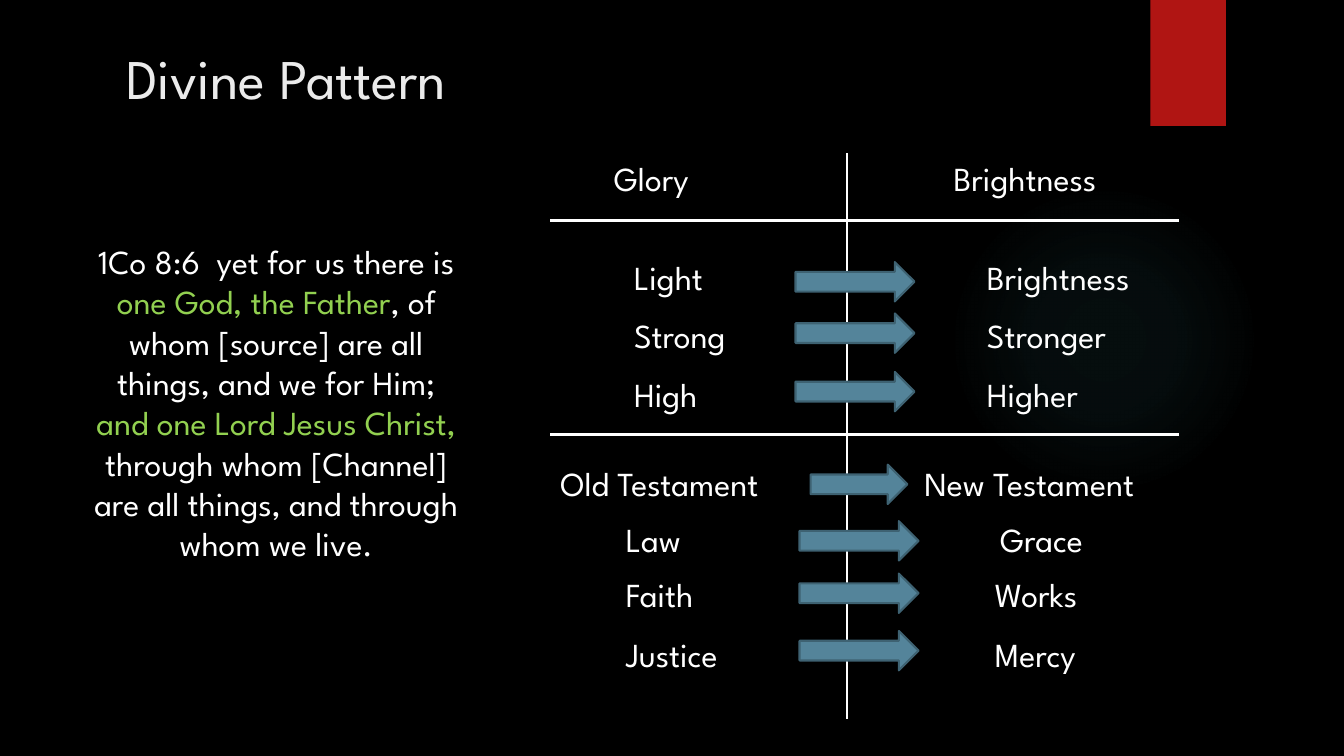
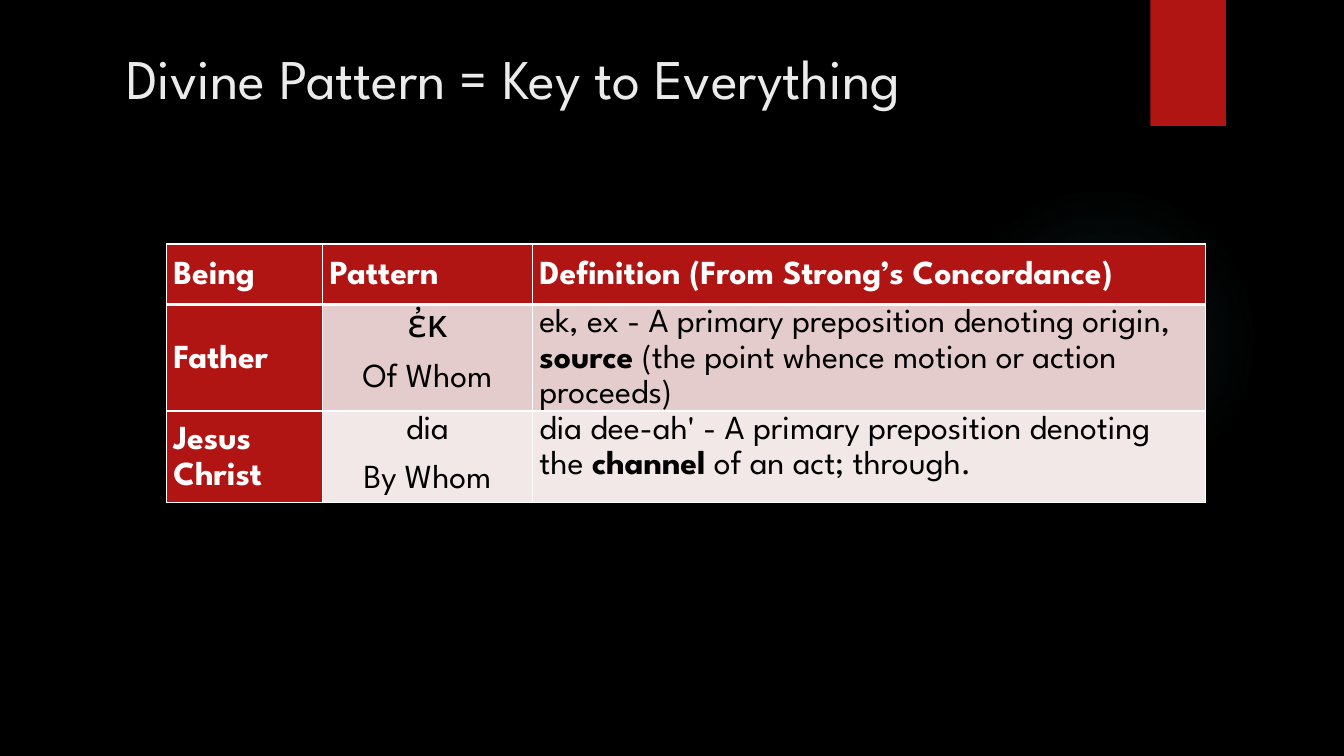
"""Build two slides on the divine pattern."""
from dataclasses import dataclass

from lxml import etree
from pptx import Presentation
from pptx.dml.color import RGBColor as Rgb
from pptx.enum.shapes import MSO_CONNECTOR as Link, MSO_SHAPE as Form
from pptx.enum.text import MSO_ANCHOR as Anchor, MSO_AUTO_SIZE as Fit, PP_ALIGN as Align
from pptx.oxml import parse_xml
from pptx.oxml.ns import qn
from pptx.util import Inches, Pt


@dataclass(frozen=True)
class Theme:
    font: str = "League Spartan"
    back: str = "000000"
    title: str = "EBEBEB"
    light: str = "FFFFFF"
    dark: str = "000000"
    red: str = "B01513"
    green: str = "92D050"
    blue: str = "54849A"
    edge: str = "3E6272"
    glow: str = "50B9C1"
    bands: tuple = ("E4CCCC", "F2E8E7")
    head: int = 40
    large: int = 28
    body: int = 24


THEME = Theme()
SPACE = "http://schemas.openxmlformats.org/drawingml/2006/main"


def write(frame, paras, align=Align.LEFT, line=None, before=0, after=0, **base):
    for index, runs in enumerate(paras):
        para = frame.paragraphs[0] if index == 0 else frame.add_paragraph()
        para.alignment = align
        if line:
            para.line_spacing = line
        para.space_before, para.space_after = Pt(before), Pt(after)
        for text, change in [(runs, {})] if isinstance(runs, str) else runs:
            look = {"size": THEME.body, "color": THEME.light, "bold": False, **base, **change}
            run = para.add_run()
            run.text = text
            run.font.name, run.font.size = THEME.font, Pt(look["size"])
            run.font.bold = look["bold"]
            run.font.color.rgb = Rgb.from_string(look["color"])


class Deck:
    def __init__(self, theme):
        self.theme = theme
        self.show = Presentation()
        self.show.slide_width, self.show.slide_height = Inches(13.33), Inches(7.5)
        self.paint(self.show.slide_master.background.fill, theme.back)

    def paint(self, fill, color):
        fill.solid()
        fill.fore_color.rgb = Rgb.from_string(color)

    def page(self, title):
        self.slide = self.show.slides.add_slide(self.show.slide_layouts[5])
        self.glow(9.41, 1.83, 3.08)
        self.shape(Form.RECTANGLE, 11.41, 0, 0.75, 1.25, self.theme.red)
        head = self.slide.shapes.title
        head.left, head.top = Inches(1.15), Inches(0.38)
        head.width, head.height = Inches(10.98), Inches(1.15)
        frame = head.text_frame
        frame.auto_size, frame.vertical_anchor = Fit.NONE, Anchor.TOP
        write(frame, [title], size=self.theme.head, color=self.theme.title)

    def shape(self, form, left, top, width, height, color, edge=None):
        item = self.slide.shapes.add_shape(
            form, Inches(left), Inches(top), Inches(width), Inches(height))
        item.shadow.inherit = False
        self.paint(item.fill, color)
        if edge:
            item.line.color.rgb = Rgb.from_string(edge)
            item.line.width = Pt(1.5)
        else:
            item.line.fill.background()
        return item

    def glow(self, left, top, size):
        item = self.shape(Form.OVAL, left, top, size, size, self.theme.glow)
        stops = "".join(
            f'<a:gs pos="{place * 1000}"><a:srgbClr val="{self.theme.glow}">'
            f'<a:alpha val="{alpha * 1000}"/></a:srgbClr></a:gs>'
            for place, alpha in ((0, 7), (36, 6), (69, 0), (100, 0)))
        grad = parse_xml(
            f'<a:gradFill xmlns:a="{SPACE}"><a:gsLst>{stops}</a:gsLst><a:path path="circle">'
            '<a:fillToRect l="50000" t="50000" r="50000" b="50000"/></a:path></a:gradFill>')
        props = item._element.spPr
        props.replace(props.find(qn("a:solidFill")), grad)

    def arrow(self, left, top, width):
        self.shape(Form.RIGHT_ARROW, left, top, width, 0.39, self.theme.blue, self.theme.edge)

    def rule(self, left, top, right, low):
        item = self.slide.shapes.add_connector(
            Link.STRAIGHT, Inches(left), Inches(top), Inches(right), Inches(low))
        item.line.color.rgb = Rgb.from_string(self.theme.light)
        item.line.width = Pt(2)
        etree.SubElement(item._element.spPr, qn("a:effectLst"))

    def text(self, paras, left, top, width, height=0.5, wrap=False, **look):
        box = self.slide.shapes.add_textbox(
            Inches(left), Inches(top), Inches(width), Inches(height))
        box.text_frame.word_wrap = wrap
        box.text_frame.auto_size = Fit.SHAPE_TO_FIT_TEXT
        write(box.text_frame, paras, **look)

    def border(self, cell, **widths):
        for side in "LRTB":
            line = etree.SubElement(
                cell._tc.get_or_add_tcPr(), qn(f"a:ln{side}"), w=str(Pt(widths.get(side, 1))))
            fill = etree.SubElement(line, qn("a:solidFill"))
            etree.SubElement(fill, qn("a:srgbClr"), val=self.theme.light)

    def table(self, rows, left, top, widths, heights):
        grid = self.slide.shapes.add_table(
            len(rows), len(widths), Inches(left), Inches(top),
            Inches(sum(widths)), Inches(sum(heights))).table
        grid.horz_banding = False
        for col, width in zip(grid.columns, widths):
            col.width = Inches(width)
        for row, height in zip(grid.rows, heights):
            row.height = Inches(height)
        for down, row in enumerate(rows):
            for over, (paras, look) in enumerate(row):
                cell = grid.cell(down, over)
                label = down == 0 or over == 0
                cell.margin_left = cell.margin_right = Inches(0.07)
                cell.margin_top = cell.margin_bottom = 0
                cell.vertical_anchor = Anchor.MIDDLE if label else Anchor.TOP
                self.border(cell, T=3 if down == 1 else 1, B=3 if down == 0 else 1)
                self.paint(cell.fill, self.theme.red if label else self.theme.bands[down - 1])
                tone = self.theme.light if label else self.theme.dark
                write(cell.text_frame, paras,
                      **{"line": 1.15, "after": 10, "color": tone, "bold": label, **look})


def pattern(deck):
    deck.page("Divine Pattern")
    for level in (2.19, 4.31):
        deck.rule(5.46, level, 11.69, level)
    deck.rule(8.4, 1.52, 8.4, 7.13)
    pairs = [
        (1.52, "Glory", 5.99, 1.16, "Brightness", 9.36, 1.8, None),
        (2.5, "Light", 6.19, 0.97, "Brightness", 9.69, 1.8, (7.89, 2.6, 1.18)),
        (3.08, "Strong", 6.19, 1.24, "Stronger", 9.69, 1.56, (7.89, 3.11, 1.18)),
        (3.66, "High", 6.19, 0.93, "Higher", 9.69, 1.25, (7.89, 3.69, 1.18)),
        (4.54, "Old Testament", 5.46, 2.58, "New Testament", 9.07, 2.74, (8.04, 4.61, 0.96)),
        (5.1, "Law", 6.11, 0.87, "Grace", 9.82, 1.26, (7.93, 5.17, 1.18)),
        (5.64, "Faith", 6.11, 0.98, "Works", 9.77, 1.15, (7.93, 5.69, 1.18)),
        (6.24, "Justice", 6.11, 1.32, "Mercy", 9.77, 1.23, (7.93, 6.26, 1.18)),
    ]
    for top, first, left, width, second, right, span, arrow in pairs:
        deck.text([first], left, top, width)
        deck.text([second], right, top, span)
        if arrow:
            deck.arrow(*arrow)
    green = {"color": THEME.green}
    verse = [
        ("1Co 8:6  yet for us there is ", {}),
        ("one God, the Father", green),
        (", of whom [source] are all things, and we for Him; ", {}),
        ("and one Lord Jesus Christ, ", green),
        ("through whom [Channel] are all things, and through whom we live.", {}),
    ]
    deck.text([verse], 0.78, 2.34, 3.92, 4.14, wrap=True, align=Align.CENTER)


def key(deck):
    deck.page("Divine Pattern = Key to Everything")
    bold, mid = {"bold": True}, {"align": Align.CENTER}
    source = [
        ("ek, ex - A primary preposition denoting origin, ", {}),
        ("source", bold),
        (" (the point whence motion or action proceeds)", {}),
    ]
    channel = [
        ("dia dee-ah' - A primary preposition denoting the ", {}),
        ("channel", bold),
        (" of an act; through.", {}),
    ]
    heads = ("Being", "Pattern", "Definition (From Strong’s Concordance)")
    rows = [
        [([head], {}) for head in heads],
        [(["Father"], {}),
         ([[("ἐκ", {"size": THEME.large})], "Of Whom"], mid),
         ([source], {})],
        [(["Jesus Christ"], {}),
         (["dia", "By Whom"], mid),
         ([channel], {"line": None, "after": 2})],
    ]
    rows[2][2][1]["line"] = 1.15
    deck.table(rows, 1.65, 2.42, (1.55, 2.08, 6.68), (0.6, 0.91, 0.91))


def main():
    deck = Deck(THEME)
    pattern(deck)
    key(deck)
    deck.show.save("out.pptx")


if __name__ == "__main__":
    main()
